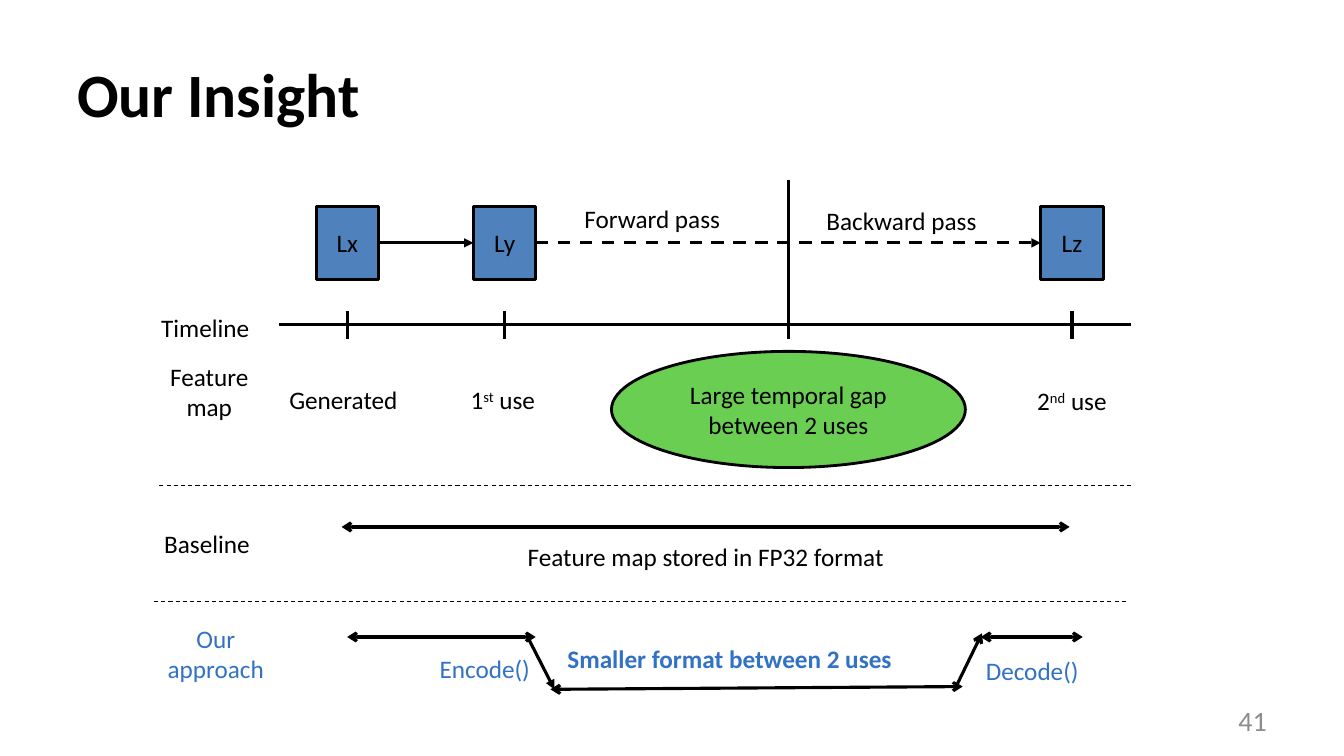
import pptx
import pptx.util
import pptx.dml.color
import pptx.enum.dml
import pptx.enum.shapes
import pptx.enum.text
import pptx.oxml.ns
import pptx.oxml.xmlchemy

Pt = pptx.util.Pt
RGBColor = pptx.dml.color.RGBColor
PP_ALIGN = pptx.enum.text.PP_ALIGN
MSO_ANCHOR = pptx.enum.text.MSO_ANCHOR
MSO_SHAPE = pptx.enum.shapes.MSO_SHAPE
DASH = pptx.enum.dml.MSO_LINE.DASH

BLACK = RGBColor(0x00, 0x00, 0x00)
GRAY = RGBColor(0x8C, 0x8C, 0x8C)
LAYER_BLUE = RGBColor(0x4F, 0x81, 0xBD)
TEXT_BLUE = RGBColor(0x31, 0x72, 0xC4)
GREEN = RGBColor(0x6A, 0xCE, 0x52)

presentation = pptx.Presentation()
presentation.slide_width = Pt(960)
presentation.slide_height = Pt(540)
slide = presentation.slides.add_slide(presentation.slide_layouts[6])


def write_text(shape, text, size=18, color=BLACK, bold=False, align=PP_ALIGN.CENTER):
    """Fill a shape with one paragraph; parts between ^ marks are superscript."""
    paragraph = shape.text_frame.paragraphs[0]
    paragraph.alignment = align
    for index, part in enumerate(text.split("^")):
        run = paragraph.add_run()
        run.text = part
        run.font.name = "Calibri"
        run.font.size = Pt(size)
        run.font.bold = bold
        run.font.color.rgb = color
        if index % 2:
            run.font._element.set("baseline", "30000")


def add_line(x1, y1, x2, y2, width=2.25, dash=None, head=None, tail=None):
    """Draw a line; head is the arrowhead at its start, tail the one at its end."""
    line = slide.shapes.add_connector(
        pptx.enum.shapes.MSO_CONNECTOR.STRAIGHT, Pt(x1), Pt(y1), Pt(x2), Pt(y2))
    line.line.color.rgb = BLACK
    line.line.width = Pt(width)
    if dash:
        line.line.dash_style = dash
    properties = line._element.spPr
    for tag, kind in (("a:headEnd", head), ("a:tailEnd", tail)):
        if kind:
            arrowhead = pptx.oxml.xmlchemy.OxmlElement(tag)
            arrowhead.set("type", kind)
            properties.find(pptx.oxml.ns.qn("a:ln")).append(arrowhead)
    properties.append(pptx.oxml.xmlchemy.OxmlElement("a:effectLst"))
    return line


# Title and slide number
for left, top, width, height, text, size, color, bold, align in (
    (48, 21.6, 864, 90, "Our Insight", 44, BLACK, True, PP_ALIGN.LEFT),
    (688, 500.4, 224, 28.8, "41", 20, GRAY, False, PP_ALIGN.RIGHT),
):
    box = slide.shapes.add_textbox(Pt(left), Pt(top), Pt(width), Pt(height))
    box.text_frame.word_wrap = True
    box.text_frame.vertical_anchor = MSO_ANCHOR.MIDDLE
    write_text(box, text, size, color, bold, align)

# Layers, each with a tick on the timeline below, and the gap between the uses
LAYER_TOP, LAYER_WIDTH, LAYER_HEIGHT = 147.6, 44.6, 51.8
LAYER_MIDDLE = LAYER_TOP + LAYER_HEIGHT / 2
TICK_TOP, TICK_BOTTOM = 222, 242

nodes = {}
for kind, left, top, width, height, fill, text in (
    (MSO_SHAPE.RECTANGLE, 225.8, LAYER_TOP, LAYER_WIDTH, LAYER_HEIGHT, LAYER_BLUE, "Lx"),
    (MSO_SHAPE.RECTANGLE, 338.2, LAYER_TOP, LAYER_WIDTH, LAYER_HEIGHT, LAYER_BLUE, "Ly"),
    (MSO_SHAPE.RECTANGLE, 743.4, LAYER_TOP, LAYER_WIDTH, LAYER_HEIGHT, LAYER_BLUE, "Lz"),
    (MSO_SHAPE.OVAL, 436.8, 251, 252.8, 83, GREEN, "Large temporal gap between 2 uses"),
):
    shape = slide.shapes.add_shape(kind, Pt(left), Pt(top), Pt(width), Pt(height))
    shape.shadow.inherit = False
    shape.fill.solid()
    shape.fill.fore_color.rgb = fill
    shape.line.color.rgb = BLACK
    shape.line.width = Pt(2)
    shape.text_frame.word_wrap = True
    shape.text_frame.vertical_anchor = MSO_ANCHOR.MIDDLE
    write_text(shape, text)
    nodes[text] = shape
    if kind == MSO_SHAPE.RECTANGLE:
        center = left + width / 2
        add_line(center, TICK_TOP, center, TICK_BOTTOM)

for source, target, dash in (("Lx", "Ly", None), ("Ly", "Lz", DASH)):
    arrow = add_line(0, LAYER_MIDDLE, 100, LAYER_MIDDLE, dash=dash, tail="triangle")
    arrow.begin_connect(nodes[source], 3)
    arrow.end_connect(nodes[target], 1)

# Timeline and the border between the two passes
add_line(199.6, 232, 808, 232)
add_line(563.2, 128.4, 563.2, TICK_BOTTOM)

# Row separators
add_line(113.8, 347, 810, 347, width=0.75, dash=DASH)
add_line(110, 430, 806.4, 430, width=0.75, dash=DASH)

# Storage spans of the baseline and of our approach
for x1, y1, x2, y2 in (
    (244, 376.4, 764, 376.4),
    (248, 455, 382.6, 455),
    (700.6, 455, 773.4, 455),
    (393.2, 492.4, 687.6, 490.4),
):
    add_line(x1, y1, x2, y2, head="arrow", tail="arrow")
add_line(378, 457.2, 396, 492.4, tail="triangle")
add_line(701.4, 452.4, 684, 488.2, head="arrow")

# Labels on one line
for left, top, width, text, color, bold in (
    (410.4, 142, 124.6, "Forward pass", BLACK, False),
    (583.2, 143.4, 137.6, "Backward pass", BLACK, False),
    (108, 219.8, 82.8, "Timeline", BLACK, False),
    (199.6, 271, 100, "Generated", BLACK, False),
    (329, 271, 68.4, "1^st^ use", BLACK, False),
    (733.8, 272, 72, "2^nd^ use", BLACK, False),
    (110.2, 373.8, 84.2, "Baseline", BLACK, False),
    (398.2, 456, 280.8, "Smaller format between 2 uses", TEXT_BLUE, True),
):
    label = slide.shapes.add_textbox(Pt(left), Pt(top), Pt(width), Pt(29))
    label.text_frame.word_wrap = False
    label.text_frame.auto_size = pptx.enum.text.MSO_AUTO_SIZE.SHAPE_TO_FIT_TEXT
    write_text(label, text, color=color, bold=bold, align=PP_ALIGN.LEFT)

# Centred labels that wrap
for left, top, width, height, text, color in (
    (108.8, 254.2, 81.4, 51, "Feature map", BLACK),
    (339.2, 383.2, 329.8, 29, "Feature map stored in FP32 format", BLACK),
    (108, 441.4, 92.2, 51, "Our approach", TEXT_BLUE),
    (300.2, 463, 92.2, 29, "Encode()", TEXT_BLUE),
    (691.2, 464.4, 92.2, 29, "Decode()", TEXT_BLUE),
):
    label = slide.shapes.add_textbox(Pt(left), Pt(top), Pt(width), Pt(height))
    label.text_frame.word_wrap = True
    label.text_frame.auto_size = pptx.enum.text.MSO_AUTO_SIZE.SHAPE_TO_FIT_TEXT
    write_text(label, text, color=color)

presentation.save("out.pptx")
